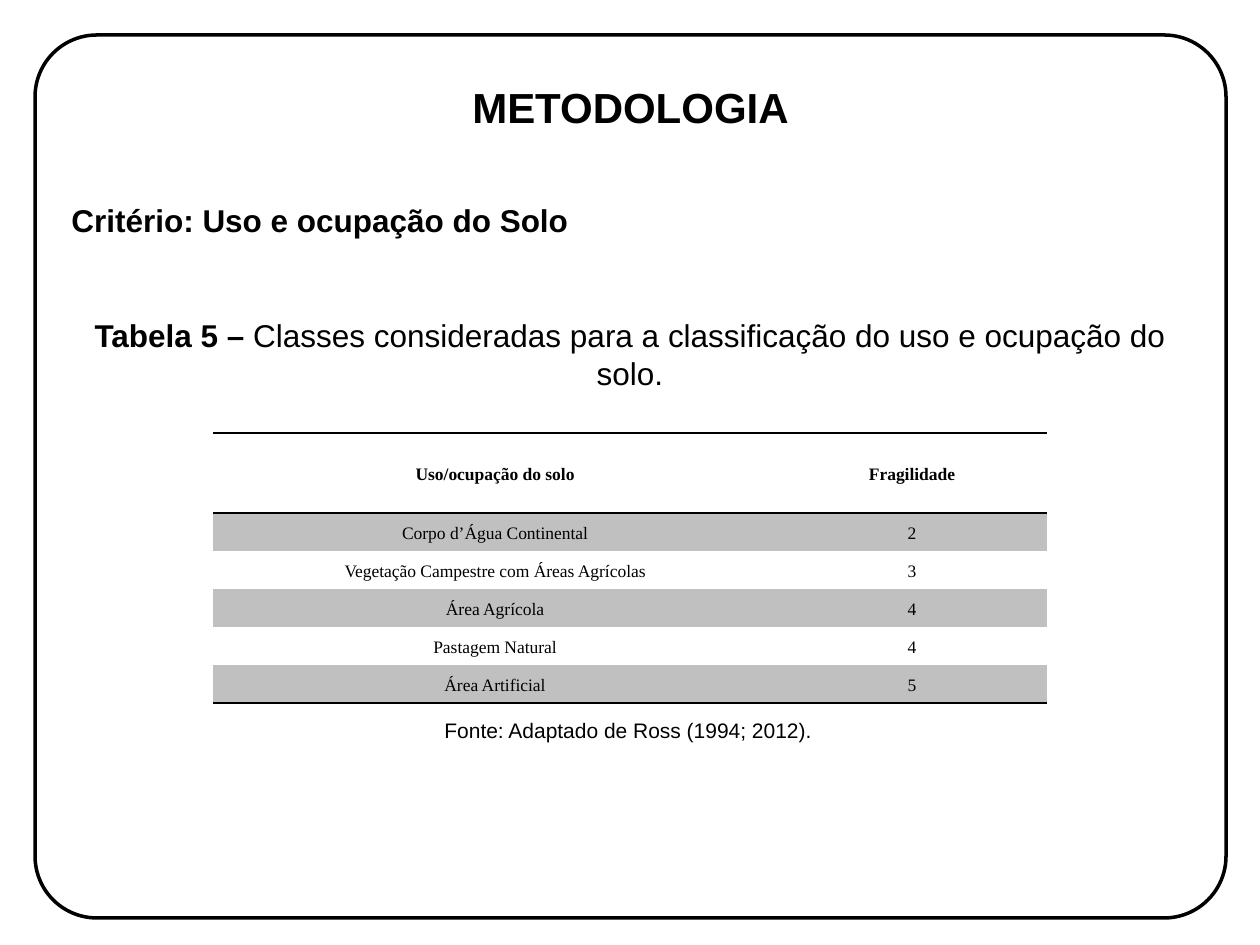
from dataclasses import dataclass

from lxml.etree import SubElement
from pptx import Presentation
from pptx.dml.color import RGBColor
from pptx.enum.shapes import MSO_SHAPE
from pptx.enum.text import MSO_ANCHOR, PP_ALIGN
from pptx.oxml.ns import qn
from pptx.util import Emu, Pt

TITLE = "METODOLOGIA"
CRITERION = "Critério: Uso e ocupação do Solo"
CAPTION_LABEL = "Tabela 5 – "
CAPTION = "Classes consideradas para a classificação do uso e ocupação do solo."
SOURCE = "Fonte: Adaptado de Ross (1994; 2012)."
ROWS = [
    ("Uso/ocupação do solo", "Fragilidade"),
    ("Corpo d’Água Continental", "2"),
    ("Vegetação Campestre com Áreas Agrícolas", "3"),
    ("Área Agrícola", "4"),
    ("Pastagem Natural", "4"),
    ("Área Artificial", "5"),
]

# Places in px: left, top, width, height
FRAME = (35, 35, 1191, 883)
TITLE_BOX = (35, 37, 1191, 139)
BODY_BOX = (59, 195, 1142, 280)
SOURCE_BOX = (432, 711, 396, 38)
TABLE_LEFT, TABLE_TOP = 213, 433
COLUMN_WIDTHS = (564, 270)
HEADER_HEIGHT, ROW_HEIGHT = 80, 38
CELL_MARGIN = 9


@dataclass(frozen=True)
class Theme:
    ink: str = "000000"
    band: str = "C0C0C0"
    font: str = "Arial"
    table_font: str = "Times New Roman"
    title_size: int = 24
    body_size: int = 18
    source_size: int = 12
    table_size: int = 10
    frame_line: int = 2
    rule_line: int = 1


THEME = Theme()


def px(value):
    return Emu(value * 914400 // 126)


def place(box):
    return [px(value) for value in box]


def add_span(para, text, size, bold=False, font=THEME.font):
    span = para.add_run()
    span.text = text
    span.font.name = font
    span.font.size = Pt(size)
    span.font.bold = bold
    span.font.color.rgb = RGBColor.from_string(THEME.ink)


def set_borders(cell, ruled):
    """Draw the sides named in ruled and clear the others."""
    properties = cell._tc.get_or_add_tcPr()
    for index, side in enumerate("LRTB"):
        line = SubElement(properties, qn(f"a:ln{side}"))
        if side in ruled:
            line.set("w", str(Pt(THEME.rule_line)))
            fill = SubElement(line, qn("a:solidFill"))
            SubElement(fill, qn("a:srgbClr")).set("val", THEME.ink)
        else:
            line.set("w", "0")
            SubElement(line, qn("a:noFill"))
        properties.insert(index, line)


def add_frame(page):
    frame = page.shapes.add_shape(MSO_SHAPE.ROUNDED_RECTANGLE, *place(FRAME))
    frame.adjustments[0] = 0.07
    frame.shadow.inherit = False
    frame.fill.background()
    frame.line.color.rgb = RGBColor.from_string(THEME.ink)
    frame.line.width = Pt(THEME.frame_line)


def add_title(page):
    title = page.shapes.title
    title.left, title.top, title.width, title.height = place(TITLE_BOX)
    title.text_frame.vertical_anchor = MSO_ANCHOR.MIDDLE
    para = title.text_frame.paragraphs[0]
    para.alignment = PP_ALIGN.CENTER
    add_span(para, TITLE, THEME.title_size, bold=True)


def add_body(page):
    frame = page.shapes.add_textbox(*place(BODY_BOX)).text_frame
    frame.word_wrap = True
    criterion = frame.paragraphs[0]
    criterion.alignment = PP_ALIGN.JUSTIFY
    add_span(criterion, CRITERION, THEME.body_size, bold=True)
    caption = frame.add_paragraph()
    caption.alignment = PP_ALIGN.CENTER
    caption.space_before = Pt(44)
    add_span(caption, CAPTION_LABEL, THEME.body_size, bold=True)
    add_span(caption, CAPTION, THEME.body_size)


def add_source(page):
    frame = page.shapes.add_textbox(*place(SOURCE_BOX)).text_frame
    frame.word_wrap = False
    add_span(frame.paragraphs[0], SOURCE, THEME.source_size)


def fill_cell(cell, text, row):
    cell.vertical_anchor = MSO_ANCHOR.MIDDLE
    cell.margin_left = cell.margin_right = px(CELL_MARGIN)
    cell.margin_top = cell.margin_bottom = 0
    if row % 2:
        cell.fill.solid()
        cell.fill.fore_color.rgb = RGBColor.from_string(THEME.band)
    else:
        cell.fill.background()
    set_borders(cell, {0: "TB", 1: "T", len(ROWS) - 1: "B"}.get(row, ""))
    para = cell.text_frame.paragraphs[0]
    para.alignment = PP_ALIGN.CENTER
    para.line_spacing = 1.15
    add_span(para, text, THEME.table_size, bold=row == 0, font=THEME.table_font)


def add_class_table(page):
    heights = [HEADER_HEIGHT] + [ROW_HEIGHT] * (len(ROWS) - 1)
    box = (TABLE_LEFT, TABLE_TOP, sum(COLUMN_WIDTHS), sum(heights))
    table = page.shapes.add_table(len(ROWS), len(COLUMN_WIDTHS), *place(box)).table
    table.first_row = table.horz_banding = False
    for column, width in zip(table.columns, COLUMN_WIDTHS):
        column.width = px(width)
    for row, (texts, height) in enumerate(zip(ROWS, heights)):
        table.rows[row].height = px(height)
        for column, text in enumerate(texts):
            fill_cell(table.cell(row, column), text, row)


def main():
    deck = Presentation()
    deck.slide_width, deck.slide_height = px(1260), px(945)
    page = deck.slides.add_slide(deck.slide_layouts[5])
    add_frame(page)
    add_title(page)
    add_body(page)
    add_source(page)
    add_class_table(page)
    deck.save("out.pptx")


if __name__ == "__main__":
    main()
